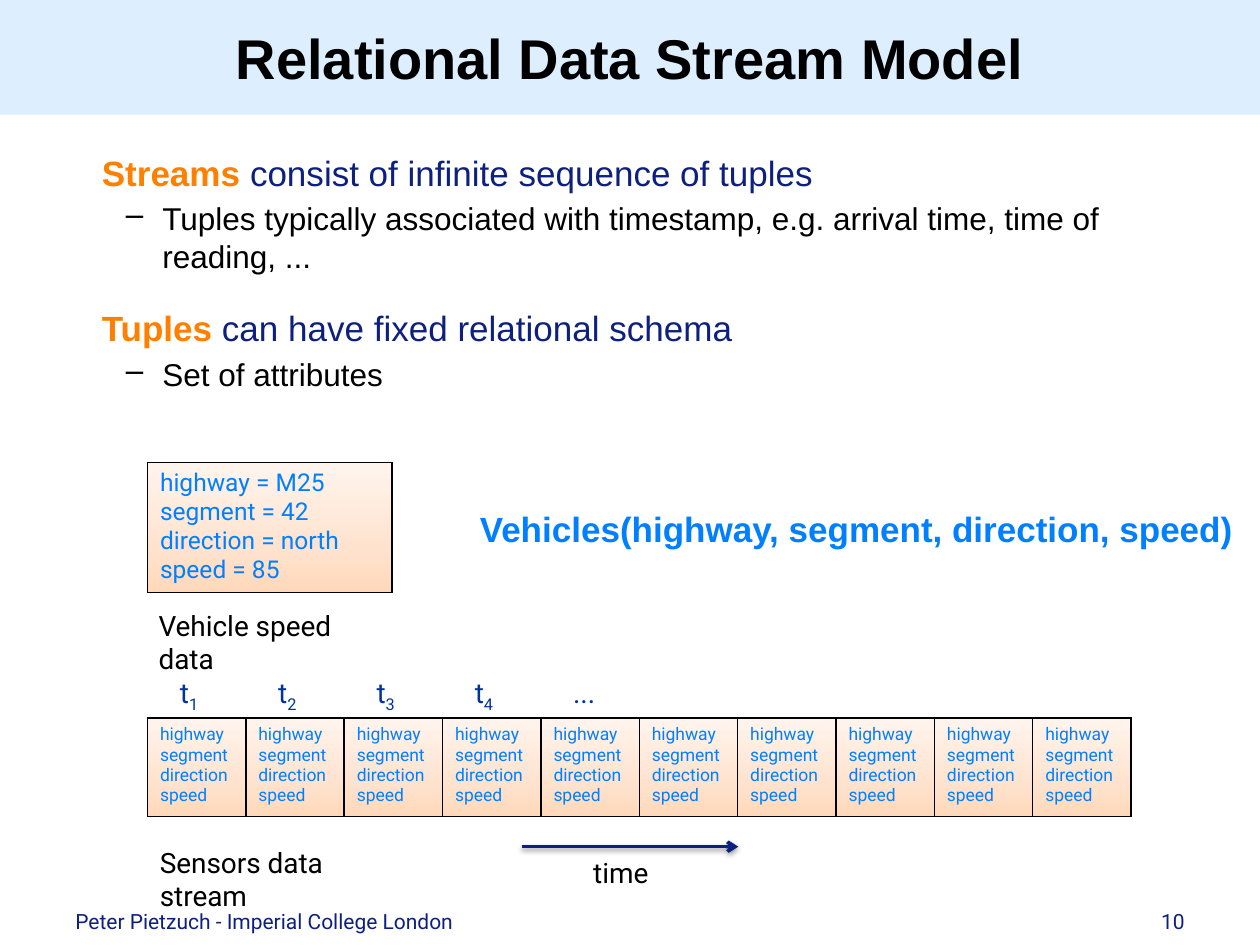
from copy import deepcopy

from pptx import Presentation
from pptx.dml.color import RGBColor
from pptx.enum.shapes import MSO_CONNECTOR, MSO_SHAPE
from pptx.enum.text import MSO_ANCHOR, MSO_AUTO_SIZE, PP_ALIGN
from pptx.oxml import parse_xml
from pptx.oxml.ns import nsdecls, qn
from pptx.util import Inches, Pt

BLACK = RGBColor(0x00, 0x00, 0x00)
PALE_BLUE = RGBColor(0xDD, 0xEE, 0xFF)
ORANGE = RGBColor(0xFF, 0x80, 0x00)
NAVY = RGBColor(0x0E, 0x20, 0x7F)
BRIGHT_BLUE = RGBColor(0x00, 0x80, 0xFF)
TIME_BLUE = RGBColor(0x00, 0x33, 0x99)
PEACH_STOPS = (
    (0, RGBColor(0xFF, 0xD8, 0xBA)),
    (35, RGBColor(0xFF, 0xE3, 0xCF)),
    (100, RGBColor(0xFF, 0xF4, 0xED)),
)

HEADING = {"name": "Arial", "size": Pt(20), "color": NAVY, "bold": False}
KEYWORD = {**HEADING, "color": ORANGE, "bold": True}
DETAIL = {**HEADING, "size": Pt(18), "color": BLACK}
LABEL = {"name": "Roboto", "size": Pt(16), "color": BLACK}
TIMESTAMP = {**LABEL, "color": TIME_BLUE}
FOOTER = {**LABEL, "size": Pt(12), "color": NAVY}
TUPLE = {**LABEL, "size": Pt(14), "color": BRIGHT_BLUE}
SMALL_TUPLE = {**TUPLE, "size": Pt(10)}


class SlideBuilder:
    """Holds the slide in hand and draws its elements in one style."""

    def __init__(self, page):
        self.page = page

    def format_span(self, span, style):
        for name, value in style.items():
            if name == "color":
                span.font.color.rgb = value
            else:
                setattr(span.font, name, value)

    def add_span(self, para, text, style):
        span = para.add_run()
        span.text = text
        self.format_span(span, style)
        return span

    def title(self, text, left, top, width, height):
        band = self.page.shapes.add_shape(
            MSO_SHAPE.RECTANGLE, Inches(left), Inches(top), Inches(width), Inches(height))
        band.shadow.inherit = False
        band.fill.solid()
        band.fill.fore_color.rgb = PALE_BLUE
        band.line.fill.background()
        band.text_frame.vertical_anchor = MSO_ANCHOR.MIDDLE
        para = band.text_frame.paragraphs[0]
        para.alignment = PP_ALIGN.CENTER
        self.add_span(para, text, {**KEYWORD, "size": Pt(32), "color": BLACK})

    def text_box(self, spans, left, top, width, height,
                 wrap=True, grow=False, align=PP_ALIGN.LEFT):
        box = self.page.shapes.add_textbox(
            Inches(left), Inches(top), Inches(width), Inches(height))
        frame = box.text_frame
        frame.word_wrap = wrap
        if grow:
            frame.auto_size = MSO_AUTO_SIZE.SHAPE_TO_FIT_TEXT
        para = frame.paragraphs[0]
        para.alignment = align
        for text, style in spans:
            self.add_span(para, text, style)
        return box

    def outline(self, topics, left, top, width, height):
        box = self.text_box([], left, top, width, height)
        frame = box.text_frame
        for index, (keyword, rest, detail) in enumerate(topics):
            para = frame.add_paragraph() if index else frame.paragraphs[0]
            para.space_before = Pt(18 if index else 0)
            para._p.get_or_add_pPr().set("marL", str(Inches(0.2)))
            self.add_span(para, keyword, KEYWORD)
            self.add_span(para, rest, HEADING)

            para = frame.add_paragraph()
            para.level = 1
            para.space_before = Pt(3.6)
            properties = para._p.get_or_add_pPr()
            properties.set("marL", str(Inches(0.68)))
            properties.set("indent", str(Inches(-0.29)))
            properties.append(parse_xml(f'<a:buChar {nsdecls("a")} char="–"/>'))
            self.add_span(para, detail, DETAIL)

    def tuple_table(self, paragraphs, style, count, left, top, width, height):
        table = self.page.shapes.add_table(
            1, count, Inches(left), Inches(top), Inches(width), Inches(height)).table
        table.first_row = False
        table.horz_banding = False
        for cell in table.iter_cells():
            frame = cell.text_frame
            for index, text in enumerate(paragraphs):
                para = frame.add_paragraph() if index else frame.paragraphs[0]
                para.text = text
                for span in para.runs:
                    self.format_span(span, style)
                # Line breaks take the size of the text around them
                for line_break in para._p.findall(qn("a:br")):
                    line_break.insert(0, deepcopy(para.runs[0]._r.rPr))
            self.dress_cell(cell)

    def dress_cell(self, cell):
        properties = cell._tc.get_or_add_tcPr()
        for side in "LRTB":
            properties.append(parse_xml(
                f'<a:ln{side} {nsdecls("a")} w="{Pt(1)}"><a:solidFill>'
                f'<a:srgbClr val="{BLACK}"/></a:solidFill></a:ln{side}>'))
        stops = "".join(
            f'<a:gs pos="{percent * 1000}"><a:srgbClr val="{color}"/></a:gs>'
            for percent, color in PEACH_STOPS)
        properties.append(parse_xml(
            f'<a:gradFill {nsdecls("a")} rotWithShape="1"><a:gsLst>{stops}</a:gsLst>'
            f'<a:lin ang="{270 * 60000}" scaled="0"/></a:gradFill>'))

    def arrow(self, start_x, end_x, y):
        line = self.page.shapes.add_connector(
            MSO_CONNECTOR.STRAIGHT, Inches(start_x), Inches(y), Inches(end_x), Inches(y))
        line.line.color.rgb = NAVY
        line.line.width = Pt(2)
        line.line._get_or_add_ln().append(
            parse_xml(f'<a:tailEnd {nsdecls("a")} type="arrow"/>'))
        line._element.spPr.append(parse_xml(
            f'<a:effectLst {nsdecls("a")}><a:outerShdw blurRad="{Pt(3.1)}" '
            f'dist="{Pt(1.6)}" dir="{90 * 60000}" rotWithShape="0">'
            f'<a:srgbClr val="{BLACK}"><a:alpha val="38000"/></a:srgbClr>'
            '</a:outerShdw></a:effectLst>'))
        return line

    def timestamp(self, number, left, top):
        box = self.text_box([("t", TIMESTAMP), (number, TIMESTAMP)],
                            left, top, 0.36, 0.37, wrap=False, grow=True)
        subscript = box.text_frame.paragraphs[0].runs[1]
        subscript._r.get_or_add_rPr().set("baseline", "-25000")


def main():
    deck = Presentation()
    deck.slide_width, deck.slide_height = Inches(10), Inches(7.5)
    page = deck.slides.add_slide(deck.slide_layouts[6])
    builder = SlideBuilder(page)

    # Title and outline
    builder.title("Relational Data Stream Model", 0, 0, 10, 0.91)
    builder.outline([
        ("Streams ", "consist of infinite sequence of tuples",
         "Tuples typically associated with timestamp, e.g. arrival time, time of reading, ..."),
        ("Tuples ", "can have fixed relational schema", "Set of attributes"),
    ], 0.51, 1.15, 8.98, 5.75)

    # Stream of tuples over time
    column = 0.78
    builder.tuple_table(["highway", "segment\vdirection", "speed"], SMALL_TUPLE,
                        10, 1.17, 5.7, 7.81, 0.78)
    time_arrow = builder.arrow(4.14, 5.86, 6.72)
    time_label = builder.text_box([("time", LABEL)], 4.61, 6.74, 0.7, 0.37, wrap=False)
    page.shapes.add_group_shape([time_arrow, time_label])
    for index in range(4):
        builder.timestamp(str(index + 1), 1.33 + index * column, 5.31)
    builder.text_box([("...", TIMESTAMP)], 1.33 + 4 * column, 5.31, 0.41, 0.37,
                     wrap=False, grow=True)
    builder.text_box([("Sensors data stream", LABEL)], 1.17, 6.66, 2.2, 0.37, grow=True)

    # Single tuple and its schema
    builder.tuple_table(["highway = M25", "segment = 42\vdirection = north\vspeed = 85"],
                        TUPLE, 1, 1.17, 3.67, 1.94, 1.03)
    builder.text_box([("Vehicle speed data", LABEL)], 1.16, 4.78, 2.02, 0.37, grow=True)
    builder.text_box([("Vehicles(highway, segment, direction, speed)",
                       {**KEYWORD, "color": BRIGHT_BLUE})],
                     3.71, 3.98, 6.19, 0.44, wrap=False, grow=True)

    # Footer
    builder.text_box([("Peter Pietzuch - Imperial College London", FOOTER)],
                     0.5, 7.16, 6.06, 0.28)
    builder.text_box([("10", FOOTER)], 7.42, 7.16, 2.08, 0.28, align=PP_ALIGN.RIGHT)

    deck.save("out.pptx")


if __name__ == "__main__":
    main()
